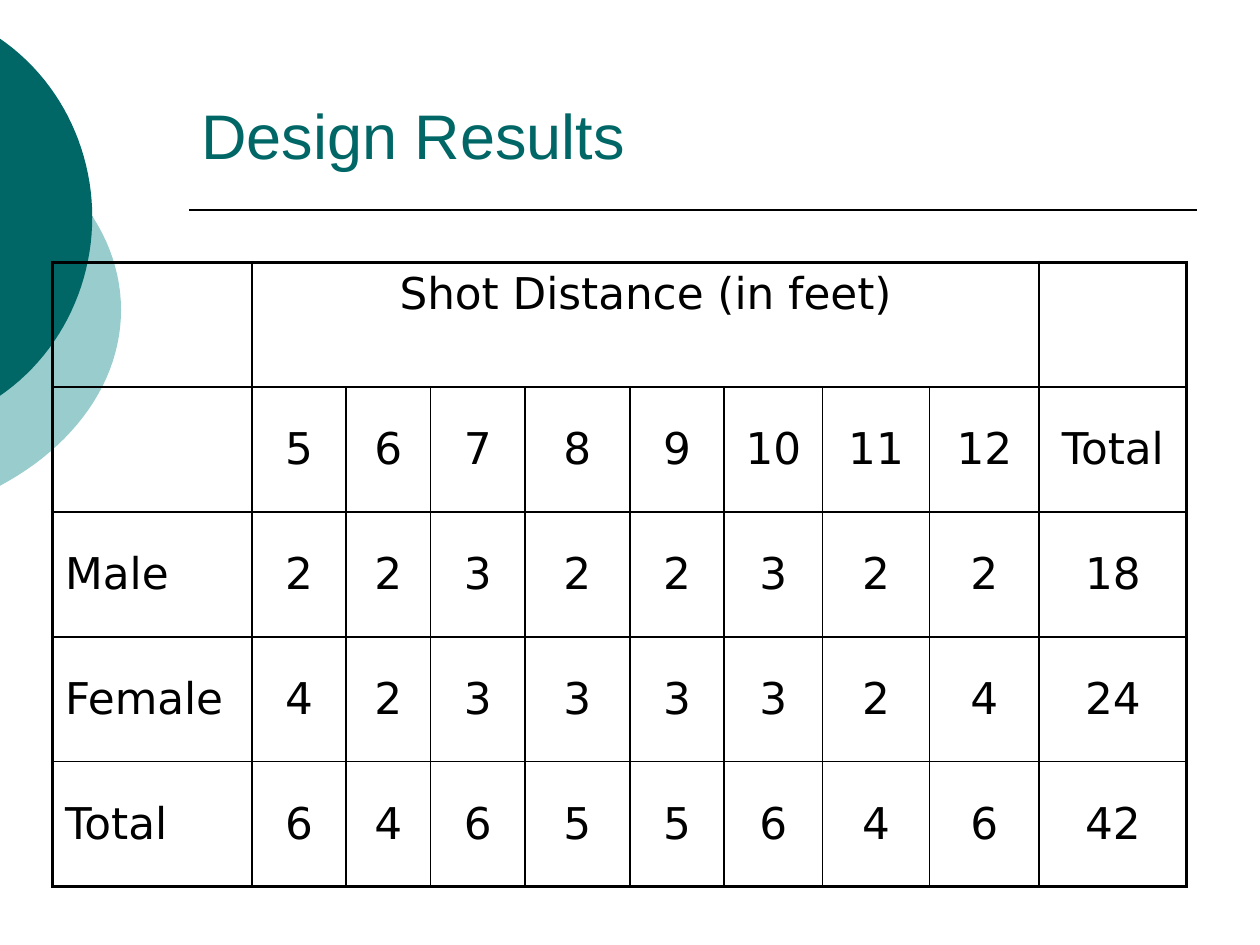
"""Build the Design Results slide: a table of shots by gender and distance."""
from lxml.etree import SubElement
from pptx import Presentation
from pptx.dml.color import RGBColor
from pptx.enum.shapes import MSO_CONNECTOR
from pptx.enum.text import MSO_ANCHOR as Anchor, PP_ALIGN as Align
from pptx.oxml import parse_xml
from pptx.oxml.ns import nsdecls, qn
from pptx.util import Cm, Pt

COLORS = {"teal": "006666", "light": "99CCCC", "black": "000000"}
TITLE = "Design Results"
ROWS = [
    ["", "Shot Distance (in feet)", "", "", "", "", "", "", "", ""],
    ["", "5", "6", "7", "8", "9", "10", "11", "12", "Total"],
    ["Male", "2", "2", "3", "2", "2", "3", "2", "2", "18"],
    ["Female", "4", "2", "3", "3", "3", "3", "2", "4", "24"],
    ["Total", "6", "4", "6", "5", "5", "6", "4", "6", "42"],
]
COLUMN_WIDTHS = [4.02, 1.9, 1.7, 1.9, 2.12, 1.9, 1.98, 2.16, 2.21, 2.97]
TABLE_HEIGHT = 12.58
DISCS = [
    ("light", [(-8.99, 1.91), (2.44, 10.6)],
     [(-0.03, 2.69), (1.52, 3.51), (2.44, 4.83), (2.44, 6.25)]),
    ("teal", [(-6.73, 0), (1.86, 8.76)],
     [(-0.03, 0.76), (1.17, 1.57), (1.86, 2.95), (1.86, 4.38)]),
]
CURVE_STEPS = 24


def rgb(name):
    return RGBColor.from_string(COLORS[name])


def add_run(paragraph, text, font, size, color):
    run = paragraph.add_run()
    run.text = text
    run.font.name, run.font.size = font, Pt(size)
    run.font.color.rgb = rgb(color)


def curve_point(controls, t):
    weights = ((1 - t) ** 3, 3 * t * (1 - t) ** 2, 3 * t * t * (1 - t), t ** 3)
    return tuple(sum(w * p[axis] for w, p in zip(weights, controls)) for axis in (0, 1))


def add_disc(slide, color, frame_corners, controls):
    upper = [curve_point(controls, i / CURVE_STEPS) for i in range(CURVE_STEPS + 1)]
    middle = controls[-1][1]
    lower = [(x, 2 * middle - y) for x, y in reversed(upper[:-1])]
    outline = [(Cm(x), Cm(y)) for x, y in upper + lower]
    first, second = [(Cm(x), Cm(y)) for x, y in frame_corners]
    builder = slide.shapes.build_freeform(*first, scale=1.0)
    builder.move_to(*second)
    builder.move_to(*outline[0])
    builder.add_line_segments(outline[1:], close=True)
    shape = builder.convert_to_shape()
    shape.shadow.inherit = False
    shape.fill.solid()
    shape.fill.fore_color.rgb = rgb(color)
    shape.line.fill.background()


def set_borders(cell, widths):
    properties = cell._tc.get_or_add_tcPr()
    for index, (side, points) in enumerate(widths.items()):
        properties.insert(index, parse_xml(
            f'<a:ln{side} {nsdecls("a")} w="{Pt(points)}"><a:solidFill>'
            f'<a:srgbClr val="{COLORS["black"]}"/></a:solidFill></a:ln{side}>'))


def add_title(slide):
    rule = slide.shapes.add_connector(
        MSO_CONNECTOR.STRAIGHT, Cm(3.81), Cm(4.24), Cm(24.13), Cm(4.24))
    rule.line.color.rgb, rule.line.width = rgb("black"), Pt(1)
    SubElement(rule._element.spPr, qn("a:effectLst"))
    frame = slide.shapes.add_textbox(Cm(3.81), Cm(0.83), Cm(20.32), Cm(2.77)).text_frame
    frame.word_wrap, frame.vertical_anchor = True, Anchor.BOTTOM
    add_run(frame.paragraphs[0], TITLE, "Arial", 36, "teal")


def add_results(slide):
    last_row, last_column = len(ROWS) - 1, len(COLUMN_WIDTHS) - 1
    table = slide.shapes.add_table(
        len(ROWS), len(COLUMN_WIDTHS), Cm(1.06), Cm(5.29),
        Cm(sum(COLUMN_WIDTHS)), Cm(TABLE_HEIGHT)).table
    table.first_row = table.horz_banding = False
    for column, width in zip(table.columns, COLUMN_WIDTHS):
        column.width = Cm(width)
    table.cell(0, 1).merge(table.cell(0, last_column - 1))
    for r, values in enumerate(ROWS):
        for c, text in enumerate(values):
            cell = table.cell(r, c)
            cell.fill.background()
            cell.vertical_anchor = Anchor.MIDDLE if r else Anchor.TOP
            edges = {"L": c == 0, "R": c == last_column, "T": r == 0, "B": r == last_row}
            set_borders(cell, {side: 2.25 if outer else 1 for side, outer in edges.items()})
            if text:
                paragraph = cell.text_frame.paragraphs[0]
                paragraph.alignment = Align.CENTER if c else Align.LEFT
                add_run(paragraph, text, "DejaVu Sans", 25, "black")


def main():
    presentation = Presentation()
    presentation.slide_width, presentation.slide_height = Cm(25.4), Cm(19.05)
    slide = presentation.slides.add_slide(presentation.slide_layouts[6])
    for color, frame_corners, controls in DISCS:
        add_disc(slide, color, frame_corners, controls)
    add_title(slide)
    add_results(slide)
    presentation.save("out.pptx")


if __name__ == "__main__":
    main()
